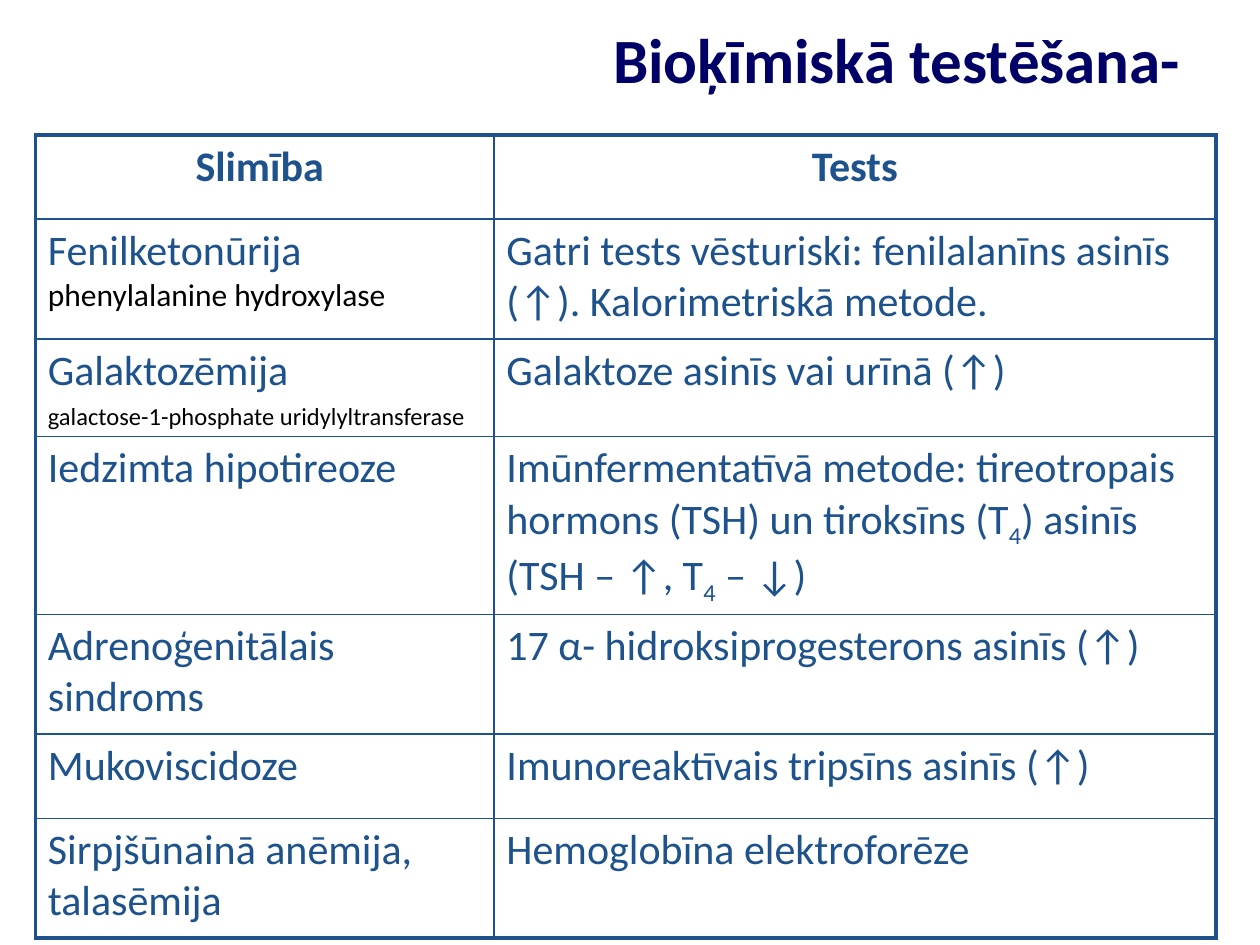
"""Build a slide with a table of biochemical screening tests."""
from dataclasses import dataclass

from lxml.etree import SubElement
from pptx import Presentation
from pptx.dml.color import RGBColor
from pptx.enum.text import MSO_ANCHOR, PP_ALIGN
from pptx.oxml.ns import qn
from pptx.util import Inches, Pt


@dataclass(frozen=True)
class Theme:
    font: str = "Calibri"
    navy: str = "000066"
    blue: str = "1D528D"
    black: str = "000000"
    title: int = 36
    body: int = 24
    enzyme: int = 18
    small_enzyme: int = 14
    outer_line: float = 2.25
    inner_line: float = 1


THEME = Theme()


def add_run(paragraph, text, size=THEME.body, color=THEME.blue, baseline=0):
    run = paragraph.add_run()
    run.text = text
    run.font.size = Pt(size)
    run.font.color.rgb = RGBColor.from_string(color)
    if baseline:
        run.font._element.set("baseline", str(baseline))


def set_borders(cell, widths):
    cell_properties = cell._tc.get_or_add_tcPr()
    for position, (side, width) in enumerate(widths.items()):
        line = SubElement(cell_properties, qn(f"a:ln{side}"), w=str(Pt(width)))
        solid = SubElement(line, qn("a:solidFill"))
        SubElement(solid, qn("a:srgbClr"), val=THEME.blue)
        cell_properties.insert(position, line)


subscript_four = ("4", THEME.body, THEME.blue, -25000)
rows = [
    (0.67, [[("Slimība ",)]], [[("Tests",)]]),
    (0.95,
     [[("Fenilketonūrija ",),
       ("phenylalanine hydroxylase", THEME.enzyme, THEME.black)]],
     [[("Gatri tests vēsturiski: fenilalanīns asinīs (↑). Kalorimetriskā metode.",)]]),
    (0.67,
     [[("Galaktozēmija",)],
      [("galactose-1-phosphate uridylyltransferase", THEME.small_enzyme, THEME.black)]],
     [[("Galaktoze asinīs vai urīnā (↑)",)]]),
    (1.37,
     [[("Iedzimta hipotireoze",)]],
     [[("Imūnfermentatīvā metode: tireotropais hormons (TSH) un tiroksīns (T",),
       subscript_four, (") asinīs (TSH – ↑, T",), subscript_four, (" – ↓)",)]]),
    (0.95, [[("Adrenoģenitālais sindroms",)]],
     [[("17 α- hidroksiprogesterons asinīs (↑)",)]]),
    (0.67, [[("Mukoviscidoze",)]], [[("Imunoreaktīvais tripsīns asinīs (↑)",)]]),
    (0.95, [[("Sirpjšūnainā anēmija, talasēmija",)]],
     [[("Hemoglobīna elektroforēze",)]]),
]
column_widths = [3.64, 5.73]

presentation = Presentation()
presentation.slide_width = Inches(10)
presentation.slide_height = Inches(7.5)
slide = presentation.slides.add_slide(presentation.slide_layouts[6])

heading = slide.shapes.add_textbox(
    Inches(0.5), Inches(0), Inches(9.08), Inches(0.92)).text_frame
heading.word_wrap = True
heading.vertical_anchor = MSO_ANCHOR.MIDDLE
title = heading.paragraphs[0]
title.alignment = PP_ALIGN.RIGHT
title.font.name = THEME.font
title.font.bold = True
add_run(title, "Bioķīmiskā testēšana- ", THEME.title, THEME.navy)

tests = slide.shapes.add_table(
    len(rows), len(column_widths), Inches(0.28), Inches(1.07),
    Inches(sum(column_widths)), Inches(sum(row[0] for row in rows))).table
tests.first_row = False
tests.horz_banding = False
for column, width in zip(tests.columns, column_widths):
    column.width = Inches(width)

last_row, last_column = len(rows) - 1, len(column_widths) - 1
for row_index, (height, *contents) in enumerate(rows):
    tests.rows[row_index].height = Inches(height)
    for column_index, paragraphs in enumerate(contents):
        cell = tests.cell(row_index, column_index)
        cell.fill.background()
        on_edge = {"L": column_index == 0, "R": column_index == last_column,
                   "T": row_index == 0, "B": row_index == last_row}
        set_borders(cell, {side: THEME.outer_line if edge else THEME.inner_line
                           for side, edge in on_edge.items()})
        for paragraph_index, runs in enumerate(paragraphs):
            if paragraph_index:
                paragraph = cell.text_frame.add_paragraph()
                paragraph.space_before = Pt(3)
            else:
                paragraph = cell.text_frame.paragraphs[0]
            paragraph.alignment = PP_ALIGN.LEFT if row_index else PP_ALIGN.CENTER
            paragraph.font.name = THEME.font
            paragraph.font.bold = row_index == 0
            for run in runs:
                add_run(paragraph, *run)

presentation.save("out.pptx")
